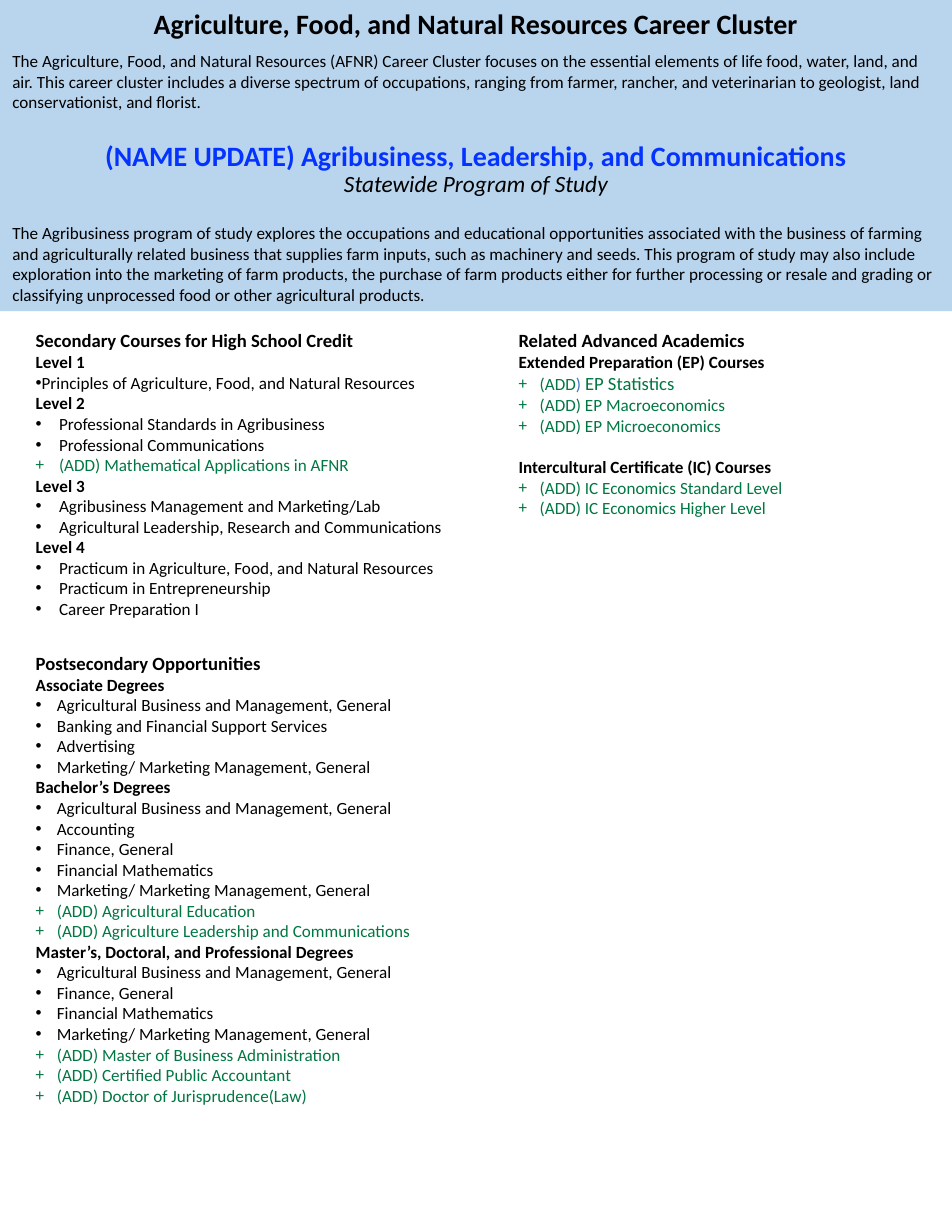
from dataclasses import dataclass

from lxml.etree import SubElement
from pptx import Presentation
from pptx.dml.color import RGBColor
from pptx.enum.shapes import MSO_SHAPE
from pptx.enum.text import MSO_ANCHOR, PP_ALIGN
from pptx.oxml.ns import qn
from pptx.util import Cm, Pt


@dataclass(frozen=True)
class Theme:
    font: str = "Calibri"
    band: str = "B9D4ED"
    ink: str = "000000"
    update: str = "0432FF"
    added: str = "007742"
    accent: str = "4472C4"
    title: float = 18
    subtitle: float = 15
    heading: float = 12
    body: float = 11
    title_gap: float = 6.6
    group_gap: float = 13.4


THEME = Theme()
PAGE_WIDTH, PAGE_HEIGHT = 21.59, 27.94

SECONDARY = [
    ("Level 1", ["Principles of Agriculture, Food, and Natural Resources"], []),
    ("Level 2", ["Professional Standards in Agribusiness", "Professional Communications"],
     ["Mathematical Applications in AFNR"]),
    ("Level 3", ["Agribusiness Management and Marketing/Lab",
                 "Agricultural Leadership, Research and Communications"], []),
    ("Level 4", ["Practicum in Agriculture, Food, and Natural Resources",
                 "Practicum in Entrepreneurship", "Career Preparation I"], []),
]
BUSINESS = "Agricultural Business and Management, General"
MARKETING = "Marketing/ Marketing Management, General"
FINANCE = ["Finance, General", "Financial Mathematics"]
POSTSECONDARY = [
    ("Associate Degrees",
     [BUSINESS, "Banking and Financial Support Services", "Advertising", MARKETING], []),
    ("Bachelor’s Degrees", [BUSINESS, "Accounting", *FINANCE, MARKETING],
     ["Agricultural Education", "Agriculture Leadership and Communications"]),
    ("Master’s, Doctoral, and Professional Degrees", [BUSINESS, *FINANCE, MARKETING],
     ["Master of Business Administration", "Certified Public Accountant",
      "Doctor of Jurisprudence(Law)"]),
]
CLUSTER_TEXT = (
    "The Agriculture, Food, and Natural Resources (AFNR) Career Cluster focuses on the "
    "essential elements of life food, water, land, and air. This career cluster includes a "
    "diverse spectrum of occupations, ranging from farmer, rancher, and veterinarian to "
    "geologist, land conservationist, and florist."
)
PROGRAM_TEXT = (
    "The Agribusiness program of study explores the occupations and educational "
    "opportunities associated with the business of farming and agriculturally related "
    "business that supplies farm inputs, such as machinery and seeds. This program of study "
    "may also include exploration into the marketing of farm products, the purchase of farm "
    "products either for further processing or resale and grading or classifying "
    "unprocessed food or other agricultural products."
)


def prepare_frame(box, anchor=MSO_ANCHOR.TOP):
    frame = box.text_frame
    frame.word_wrap = True
    frame.vertical_anchor = anchor
    frame.margin_left = frame.margin_right = Cm(0.28)
    frame.margin_top = frame.margin_bottom = Cm(0.15)
    return frame


def add_band(page, top, height, anchor=MSO_ANCHOR.TOP):
    band = page.shapes.add_shape(
        MSO_SHAPE.RECTANGLE, Cm(0), Cm(top), Cm(PAGE_WIDTH), Cm(height))
    band.shadow.inherit = False
    band.fill.solid()
    band.fill.fore_color.rgb = RGBColor.from_string(THEME.band)
    band.line.fill.background()
    return prepare_frame(band, anchor)


def add_column(page, left, top, width, height):
    return prepare_frame(page.shapes.add_textbox(Cm(left), Cm(top), Cm(width), Cm(height)))


def add_paragraph(frame, align=PP_ALIGN.LEFT):
    first = frame.paragraphs[0]
    para = frame.add_paragraph() if first.runs else first
    para.alignment = align
    return para


def add_span(para, text, size=THEME.body, color=THEME.ink, bold=False, italic=False):
    span = para.add_run()
    span.text = text
    span.font.name = THEME.font
    span.font.size = Pt(size)
    span.font.bold = bold
    span.font.italic = italic
    span.font.color.rgb = RGBColor.from_string(color)


def add_bullet(frame, mark, indent):
    para = add_paragraph(frame)
    properties = para._p.get_or_add_pPr()
    properties.set("marL", str(Cm(indent)))
    properties.set("indent", str(-Cm(indent)))
    SubElement(properties, qn("a:buFont"), typeface="Arial" if mark == "•" else THEME.font)
    SubElement(properties, qn("a:buChar"), char=mark)
    return para


def add_heading(frame, text, size=THEME.body):
    para = add_paragraph(frame)
    add_span(para, text, size, bold=True)
    return para


def add_added_item(frame, text, indent):
    add_span(add_bullet(frame, "+", indent), f"(ADD) {text}", color=THEME.added)


def add_groups(frame, groups, indent, flush=()):
    for heading, items, added in groups:
        add_heading(frame, heading)
        for item in items:
            add_span(add_bullet(frame, "•", 0 if heading in flush else indent), item)
        for item in added:
            add_added_item(frame, item, indent)


def add_banner(page):
    program = add_band(page, 2.72, 2.26, MSO_ANCHOR.MIDDLE)
    name = add_paragraph(program, PP_ALIGN.CENTER)
    add_span(name, "(NAME UPDATE) Agribusiness, Leadership, and Communications",
             THEME.title, THEME.update, bold=True)
    subtitle = add_paragraph(program, PP_ALIGN.CENTER)
    add_span(subtitle, "Statewide Program of Study", THEME.subtitle, italic=True)
    name.line_spacing = subtitle.line_spacing = 0.9

    cluster = add_band(page, 0, 2.72)
    title = add_paragraph(cluster, PP_ALIGN.CENTER)
    title.space_after = Pt(THEME.title_gap)
    add_span(title, "Agriculture, Food, and Natural Resources Career Cluster",
             THEME.title, bold=True)
    add_span(add_paragraph(cluster), CLUSTER_TEXT)

    add_span(add_paragraph(add_band(page, 4.9, 2.16)), PROGRAM_TEXT)


def add_academics(page, indent):
    academics = add_column(page, 11.48, 7.32, 10.11, 3.86)
    add_heading(academics, "Related Advanced Academics", THEME.heading)
    add_heading(academics, "Extended Preparation (EP) Courses")
    statistics = add_bullet(academics, "+", indent)
    add_span(statistics, "(ADD", color=THEME.added)
    add_span(statistics, ") ", color=THEME.accent)
    add_span(statistics, "EP Statistics", THEME.heading, THEME.added)
    for course in ("EP Macroeconomics", "EP Microeconomics"):
        add_added_item(academics, course, indent)
    certificate = add_heading(academics, "Intercultural Certificate (IC) Courses")
    certificate.space_before = Pt(THEME.group_gap)
    for level in ("Standard", "Higher"):
        add_added_item(academics, f"IC Economics {level} Level", indent)


def main():
    deck = Presentation()
    deck.slide_width, deck.slide_height = Cm(PAGE_WIDTH), Cm(PAGE_HEIGHT)
    page = deck.slides.add_slide(deck.slide_layouts[6])
    add_banner(page)

    secondary = add_column(page, 0.53, 7.32, 10.41, 7.72)
    add_heading(secondary, "Secondary Courses for High School Credit", THEME.heading)
    add_groups(secondary, SECONDARY, 0.53, flush=("Level 1",))

    postsecondary = add_column(page, 0.53, 14.63, 9.91, 11.91)
    add_heading(postsecondary, "Postsecondary Opportunities", THEME.heading)
    add_groups(postsecondary, POSTSECONDARY, 0.48)

    add_academics(page, 0.48)
    deck.save("out.pptx")


if __name__ == "__main__":
    main()
